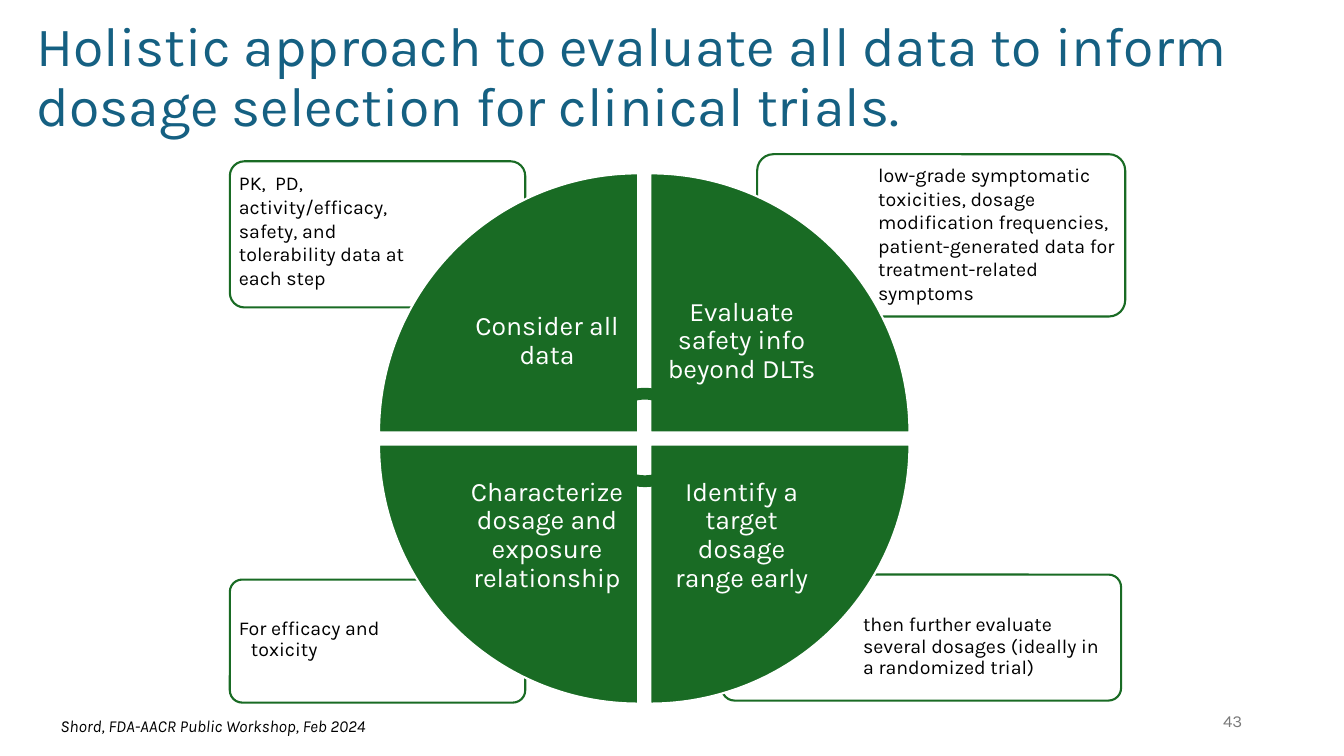
from dataclasses import dataclass
from pptx import Presentation
from pptx.dml.color import RGBColor as RGB
from pptx.enum.shapes import MSO_SHAPE as Shape
from pptx.enum.text import MSO_ANCHOR as Anchor, MSO_AUTO_SIZE as Fit, PP_ALIGN as Align
from pptx.util import Inches, Pt


@dataclass(frozen=True)
class Theme:
    font: str = "Karla"
    blue: RGB = RGB(0x15, 0x60, 0x82)
    green: RGB = RGB(0x19, 0x6B, 0x24)
    gray: RGB = RGB(0x79, 0x79, 0x79)
    black: RGB = RGB(0, 0, 0)
    white: RGB = RGB(255, 255, 255)
    title: float = 39.6
    wedge: float = 19
    note: float = 14
    foot: float = 12
    line: float = 1.5


T = Theme()
SIDE, GAP = 2.57, 0.12           # wedge size and the gap between wedges
LEFT, TOP = 3.76, 1.72           # corner of the wheel
INNER = 1.81                     # text square at the inner corner of a wedge

# Clockwise from top left: column, row, label
WEDGES = [
    (0, 0, "Consider all data"),
    (1, 0, "Evaluate safety info beyond DLTs"),
    (1, 1, "Identify a target dosage range early"),
    (0, 1, "Characterize dosage and exposure relationship"),
]

# Frame box, text box, text, hanging indent, line spacing
NOTES = [
    ((7.16, 5.7, 3.96, 1.25), (8.38, 6.04, 2.72, 0.88),
     "\tthen further evaluate several dosages (ideally in a randomized trial)", 0.12, 0.9),
    ((2.28, 5.75, 2.93, 1.22), (2.31, 6.08, 2, 0.86),
     "For efficacy and toxicity", 0.12, 0.9),
    ((7.51, 1.53, 3.65, 1.61), (8.65, 1.56, 2.49, 1.14),
     "low-grade symptomatic toxicities, dosage modification frequencies, "
     "patient-generated data for treatment-related symptoms", 0, 1),
    ((2.28, 1.6, 2.93, 1.45), (2.31, 1.64, 1.99, 1.02),
     "PK,  PD, activity/efficacy, safety, and tolerability data at each step", 0, 1),
]


def place(box):
    return [Inches(v) for v in box]


def style(para, size, color, align=Align.LEFT, space=1.0):
    para.alignment, para.line_spacing = align, space
    font = para.font
    font.name, font.size, font.color.rgb = T.font, Pt(size), color


def add_text(slide, box, text, size, color, align=Align.LEFT, space=1.0,
             anchor=Anchor.TOP, inset=None):
    frame = slide.shapes.add_textbox(*place(box)).text_frame
    frame.word_wrap, frame.vertical_anchor = True, anchor
    if inset is not None:
        frame.margin_left = frame.margin_right = Inches(inset)
        frame.margin_top = frame.margin_bottom = Inches(inset)
    para = frame.paragraphs[0]
    para.text = text
    style(para, size, color, align, space)
    return para


def add_form(slide, kind, box, fill, line, turn=0):
    form = slide.shapes.add_shape(kind, *place(box))
    form.shadow.inherit = False
    form.fill.solid()
    form.fill.fore_color.rgb = fill
    form.line.color.rgb = line
    form.line.width = Pt(T.line)
    form.rotation = turn
    return form


def add_title(slide, text):
    title = slide.shapes.title
    title.left, title.top, title.width, title.height = place((0.26, 0.57, 12.72, 1.01))
    frame = title.text_frame
    frame.text = text
    frame.word_wrap, frame.auto_size = True, Fit.NONE
    frame.vertical_anchor = Anchor.MIDDLE
    frame.margin_bottom = Inches(0.65)
    style(frame.paragraphs[0], T.title, T.blue, space=0.9)


def add_note(slide, frame, box, text, hang, space):
    form = add_form(slide, Shape.ROUNDED_RECTANGLE, frame, T.white, T.green)
    form.adjustments[0] = 0.1
    para = add_text(slide, box, text, T.note, T.black, space=space, inset=0.06)
    if hang:
        props = para._p.get_or_add_pPr()
        props.set("marL", str(Inches(hang)))
        props.set("indent", str(-Inches(hang)))


def add_wedge(slide, col, row, label, turn):
    left = LEFT + col * (SIDE + GAP)
    top = TOP + row * (SIDE + GAP)
    add_form(slide, Shape.PIE_WEDGE, (left, top, SIDE, SIDE), T.green, T.white, turn)
    shift = SIDE - INNER
    box = (left + shift * (1 - col), top + shift * (1 - row), INNER, INNER)
    add_text(slide, box, label, T.wedge, T.white, Align.CENTER, 0.9, Anchor.MIDDLE, 0.15)


def main():
    deck = Presentation()
    deck.slide_width, deck.slide_height = Inches(13.33), Inches(7.5)
    slide = deck.slides.add_slide(deck.slide_layouts[5])

    # Title and source
    add_title(slide, "Holistic approach to evaluate all data to inform "
                     "dosage selection for clinical trials.")
    source = add_text(slide, (0.5, 7.05, 5.88, 0.3),
                      "Shord, FDA-AACR Public Workshop, Feb 2024", T.foot, T.black)
    source.font.italic = True

    # Notes behind the wheel
    for note in NOTES:
        add_note(slide, *note)

    # Wheel
    for i, wedge in enumerate(WEDGES):
        add_wedge(slide, *wedge, turn=90 * i)

    # Arrows at the hub
    for top, turn in ((3.81, 0), (4.1, 180)):
        add_form(slide, Shape.CIRCULAR_ARROW, (5.95, top, 0.89, 0.77),
                 T.green, T.green, turn)

    # Slide number
    add_text(slide, (9.42, 6.95, 3, 0.4), "43", T.foot, T.gray, Align.RIGHT,
             anchor=Anchor.MIDDLE)

    deck.save("out.pptx")


if __name__ == "__main__":
    main()
